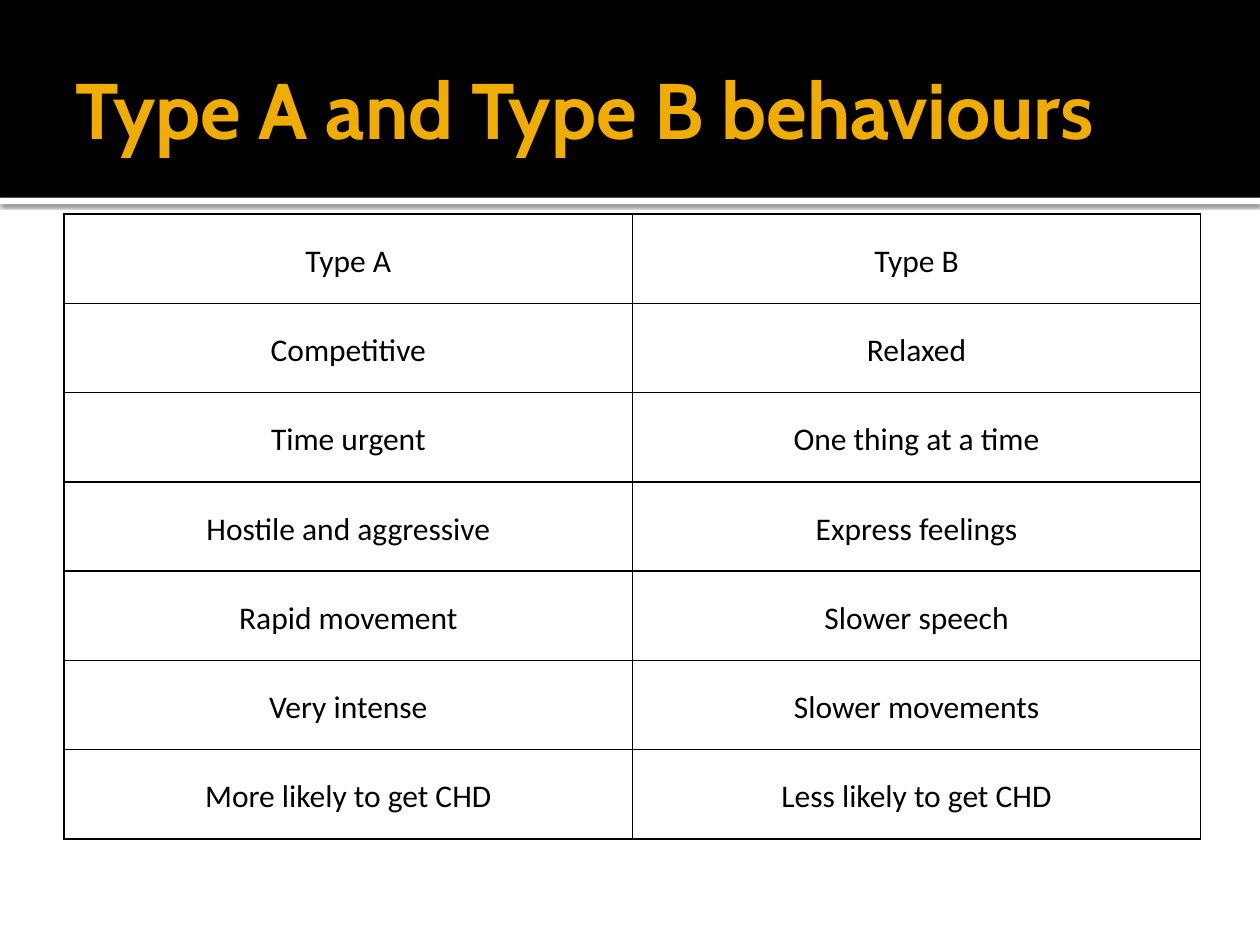
"""Build a slide with a table comparing Type A and Type B behaviours."""
from lxml.etree import SubElement
from pptx import Presentation
from pptx.dml.color import RGBColor
from pptx.enum.shapes import MSO_SHAPE
from pptx.enum.text import MSO_ANCHOR, PP_ALIGN
from pptx.oxml import parse_xml
from pptx.oxml.ns import nsdecls, qn
from pptx.util import Inches, Pt

TITLE = "Type A and Type B behaviours"
BEHAVIOURS = [
    ("Type A", "Type B"),
    ("Competitive", "Relaxed"),
    ("Time urgent", "One thing at a time"),
    ("Hostile and aggressive", "Express feelings"),
    ("Rapid movement", "Slower speech"),
    ("Very intense", "Slower movements"),
    ("More likely to get CHD", "Less likely to get CHD"),
]

BLACK = RGBColor(0x00, 0x00, 0x00)
WHITE = RGBColor(0xFF, 0xFF, 0xFF)
AMBER = RGBColor(0xF0, 0xAD, 0x00)

SLIDE_WIDTH, SLIDE_HEIGHT = 10, 7.5
HEADER_HEIGHT, STRIP_HEIGHT = 1.57, 0.05
TABLE_LEFT, TABLE_TOP, TABLE_WIDTH, TABLE_HEIGHT = 0.51, 1.7, 9.02, 4.96


def set_margins(target, left, top, right, bottom):
    target.margin_left, target.margin_top = Inches(left), Inches(top)
    target.margin_right, target.margin_bottom = Inches(right), Inches(bottom)


def format_run(run, font_name, size, color, bold=False):
    run.font.name = font_name
    run.font.size = Pt(size)
    run.font.color.rgb = color
    run.font.bold = bold


def add_band(slide, top, height, color):
    band = slide.shapes.add_shape(
        MSO_SHAPE.RECTANGLE, 0, Inches(top), Inches(SLIDE_WIDTH), Inches(height))
    band.fill.solid()
    band.fill.fore_color.rgb = color
    band.line.fill.background()
    band.shadow.inherit = False
    return band


def add_shadow(shape):
    effects = shape.element.spPr.find(qn("a:effectLst"))
    shadow = SubElement(effects, qn("a:outerShdw"), blurRad=str(Pt(2.5)),
                        dist=str(Pt(0.8)), dir="5400000", algn="tl", rotWithShape="0")
    color = SubElement(shadow, qn("a:srgbClr"), val=str(BLACK))
    SubElement(color, qn("a:alpha"), val="60000")


def add_borders(cell):
    properties = cell._tc.get_or_add_tcPr()
    for index, side in enumerate(("lnL", "lnR", "lnT", "lnB")):
        properties.insert(index, parse_xml(
            f'<a:{side} {nsdecls("a")} w="{Pt(1)}"><a:solidFill>'
            f'<a:srgbClr val="{BLACK}"/></a:solidFill></a:{side}>'))


def format_cell(cell, text):
    cell.text_frame.text = text
    cell.vertical_anchor = MSO_ANCHOR.MIDDLE
    set_margins(cell, 0.07, 0, 0.07, 0)
    cell.fill.background()
    paragraph = cell.text_frame.paragraphs[0]
    paragraph.alignment = PP_ALIGN.CENTER
    paragraph.line_spacing = 1.15
    format_run(paragraph.runs[0], "Calibri", 18, BLACK)
    add_borders(cell)


def add_title(slide):
    title = slide.shapes.title
    title.left, title.top = Inches(0.5), Inches(0.17)
    title.width, title.height = Inches(9), Inches(1.37)
    title.element.getparent().append(title.element)
    frame = title.text_frame
    frame.text = TITLE
    frame.word_wrap = True
    frame.vertical_anchor = MSO_ANCHOR.MIDDLE
    set_margins(frame, 0.1, 0.05, 0.05, 0.05)
    paragraph = frame.paragraphs[0]
    paragraph.alignment = PP_ALIGN.LEFT
    format_run(paragraph.runs[0], "Cabin", 45, AMBER, bold=True)


def add_behaviour_table(slide):
    table = slide.shapes.add_table(
        len(BEHAVIOURS), len(BEHAVIOURS[0]), Inches(TABLE_LEFT), Inches(TABLE_TOP),
        Inches(TABLE_WIDTH), Inches(TABLE_HEIGHT)).table
    table.first_row = table.horz_banding = False
    for row, texts in zip(table.rows, BEHAVIOURS):
        for cell, text in zip(row.cells, texts):
            format_cell(cell, text)


def main():
    presentation = Presentation()
    presentation.slide_width = Inches(SLIDE_WIDTH)
    presentation.slide_height = Inches(SLIDE_HEIGHT)
    slide = presentation.slides.add_slide(presentation.slide_layouts[5])
    add_shadow(add_band(slide, HEADER_HEIGHT, STRIP_HEIGHT, WHITE))
    add_band(slide, 0, HEADER_HEIGHT, BLACK)
    add_title(slide)
    add_behaviour_table(slide)
    presentation.save("out.pptx")


if __name__ == "__main__":
    main()
